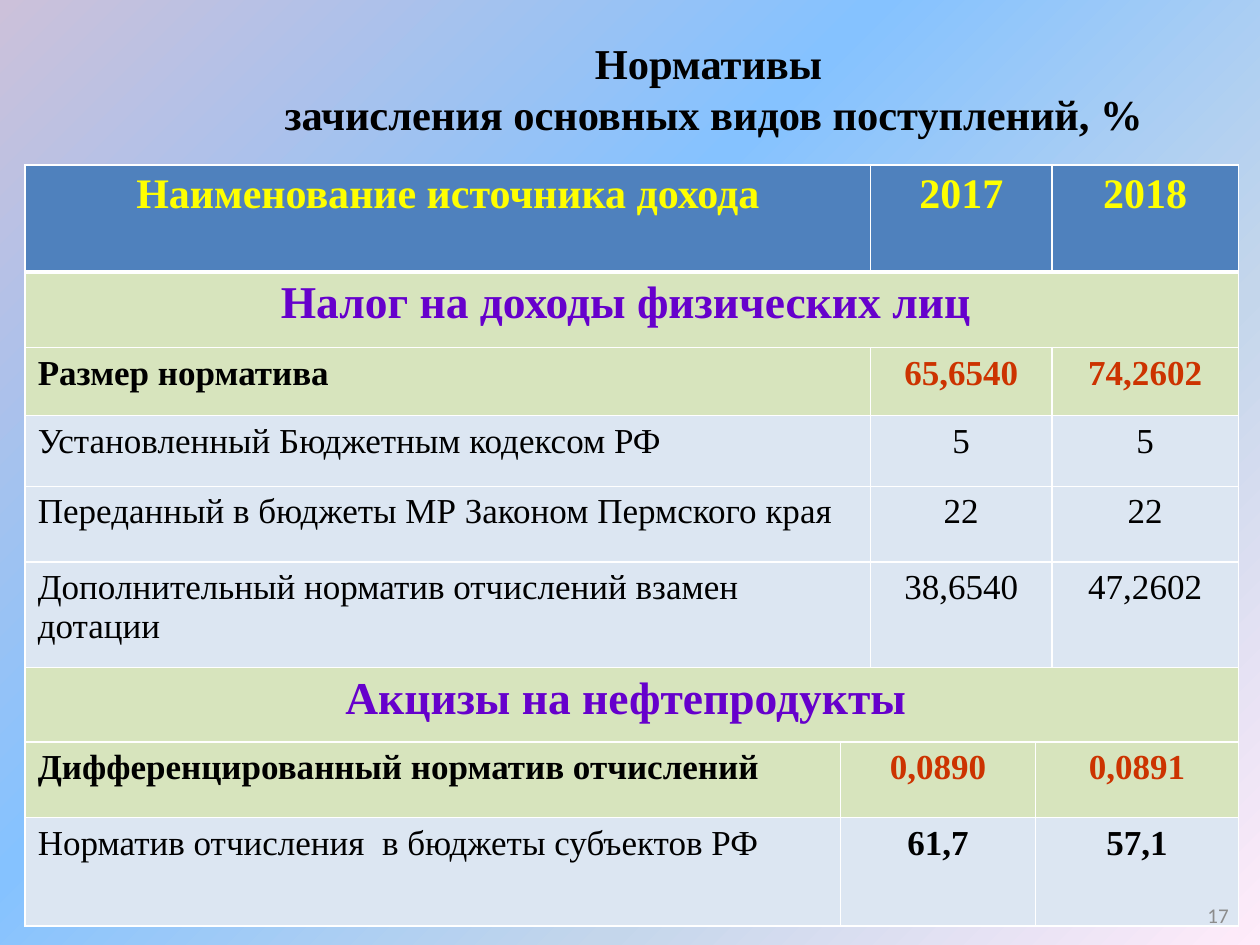
from lxml.etree import SubElement as Sub
from pptx import Presentation
from pptx.dml.color import RGBColor
from pptx.enum.text import MSO_ANCHOR as Anchor, MSO_AUTO_SIZE as Fit, PP_ALIGN as Align
from pptx.oxml import parse_xml
from pptx.oxml.ns import nsdecls, qn
from pptx.util import Inches, Pt

SERIF = "Times New Roman"
STOPS = [(0, "CCC1DA"), (40, "85C2FF"), (70, "C4D6EB"), (100, "FFEBFA")]
COLS = [6.47, 0.18, 1.31, 0.13, 1.48]
GREEN, PALE, BLACK, RED = "D7E4BD", "DCE6F2", "000000", "CC3300"

# First grid column of each cell in a row
TOP, FULL, LOW = (0, 2, 4), (0,), (0, 1, 3)

# Row kinds: fill, size, label colour and weight, value colour and weight
HEAD = ("4F81BD", 24, "FFFF00", True, "FFFF00", True)
BAND = (GREEN, 26, "6600CC", True, None, None)
SUM = (GREEN, 20, BLACK, True, RED, True)
PLAIN = (PALE, 20, BLACK, False, BLACK, False)
STRONG = (PALE, 20, BLACK, False, BLACK, True)

ROWS = [
    (0.85, HEAD, TOP, ["Наименование источника дохода", "2017", "2018"]),
    (0.6, BAND, FULL, ["Налог на доходы физических лиц "]),
    (0.54, SUM, TOP, ["Размер норматива", "65,6540", "74,2602"]),
    (0.56, PLAIN, TOP, ["Установленный Бюджетным кодексом РФ", "5", "5"]),
    (0.6, PLAIN, TOP, ["Переданный в бюджеты МР Законом Пермского края", "22", "22"]),
    (0.84, PLAIN, TOP, ["Дополнительный норматив отчислений взамен дотации",
                        "38,6540", "47,2602"]),
    (0.59, BAND, FULL, ["Акцизы на нефтепродукты "]),
    (0.6, SUM, LOW, ["Дифференцированный норматив отчислений", "0,0890", "0,0891"]),
    (0.86, STRONG, LOW, ["Норматив отчисления  в бюджеты субъектов РФ", "61,7", "57,1"]),
]


def rgb(code):
    return RGBColor.from_string(code)


def apply(item, form):
    for name, value in form.items():
        setattr(item, name, value)


def write(frame, text, align, color, **form):
    frame.text = text
    para = frame.paragraphs[0]
    para.alignment = align
    for run in para.runs:
        apply(run.font, form)
        run.font.color.rgb = rgb(color)


def place(shape, box):
    names = ("left", "top", "width", "height")
    apply(shape, dict(zip(names, map(Inches, box))))


def paint(slide):
    """Four-stop diagonal background."""
    slide.background.fill.gradient()
    grad = slide.element.find(".//" + qn("a:gradFill"))
    stops = "".join(f'<a:gs pos="{pos * 1000}"><a:srgbClr val="{code}"/></a:gs>'
                    for pos, code in STOPS)
    new = parse_xml(f'<a:gradFill {nsdecls("a")} rotWithShape="1"><a:gsLst>{stops}'
                    '</a:gsLst><a:lin ang="2700000" scaled="0"/></a:gradFill>')
    grad.getparent().replace(grad, new)


def edge(cell, widths):
    """White borders, given as widths for left, right, top and bottom."""
    props = cell._tc.get_or_add_tcPr()
    for spot, (side, width) in enumerate(zip("LRTB", widths)):
        line = props.makeelement(qn(f"a:ln{side}"), {"w": str(Pt(width))})
        fill = Sub(line, qn("a:solidFill"))
        Sub(fill, qn("a:srgbClr"), val="FFFFFF")
        props.insert(spot, line)


def add_title(slide, box):
    title = slide.shapes.title
    place(title, box)
    frame = title.text_frame
    apply(frame, dict(word_wrap=True, auto_size=Fit.NONE,
                      vertical_anchor=Anchor.MIDDLE, margin_bottom=Inches(0.44)))
    write(frame, "Нормативы \vзачисления основных видов поступлений, %",
          Align.CENTER, BLACK, name=SERIF, size=Pt(24.3), bold=True)


def add_rates(slide, box):
    grid = slide.shapes.add_table(len(ROWS), len(COLS), *map(Inches, box)).table
    for col, width in zip(grid.columns, COLS):
        col.width = Inches(width)
    for r, (height, kind, starts, texts) in enumerate(ROWS):
        fill, size, ink, bold, value_ink, value_bold = kind
        grid.rows[r].height = Inches(height)
        # Fills and borders
        for c in range(len(COLS)):
            cell = grid.cell(r, c)
            cell.fill.solid()
            cell.fill.fore_color.rgb = rgb(fill)
            edge(cell, (1, 1, 3 if r == 1 else 1, 3 if r == 0 else 1))
        # Merged spans and text
        ends = starts[1:] + (len(COLS),)
        for c, end, text in zip(starts, ends, texts):
            cell = grid.cell(r, c)
            if end - c > 1:
                cell.merge(grid.cell(r, end - 1))
            label = c == 0
            left = label and kind not in (HEAD, BAND)
            write(cell.text_frame, text, Align.LEFT if left else Align.CENTER,
                  ink if label else value_ink, name=SERIF, size=Pt(size),
                  bold=bold if label else value_bold)


def add_number(slide, box):
    frame = slide.shapes.add_textbox(*map(Inches, box)).text_frame
    apply(frame, dict(word_wrap=True, vertical_anchor=Anchor.MIDDLE))
    write(frame, "17", Align.RIGHT, "8C8C8C", name="Calibri", size=Pt(12))


def main():
    deck = Presentation()
    apply(deck, dict(slide_width=Inches(10), slide_height=Inches(7.5)))
    slide = deck.slides.add_slide(deck.slide_layouts[5])
    paint(slide)
    add_rates(slide, (0.2, 1.31, 9.57, 6.03))
    add_title(slide, (1.56, 0.21, 8.21, 1.36))
    add_number(slide, (7.52, 7, 2.33, 0.52))
    deck.save("out.pptx")


if __name__ == "__main__":
    main()
